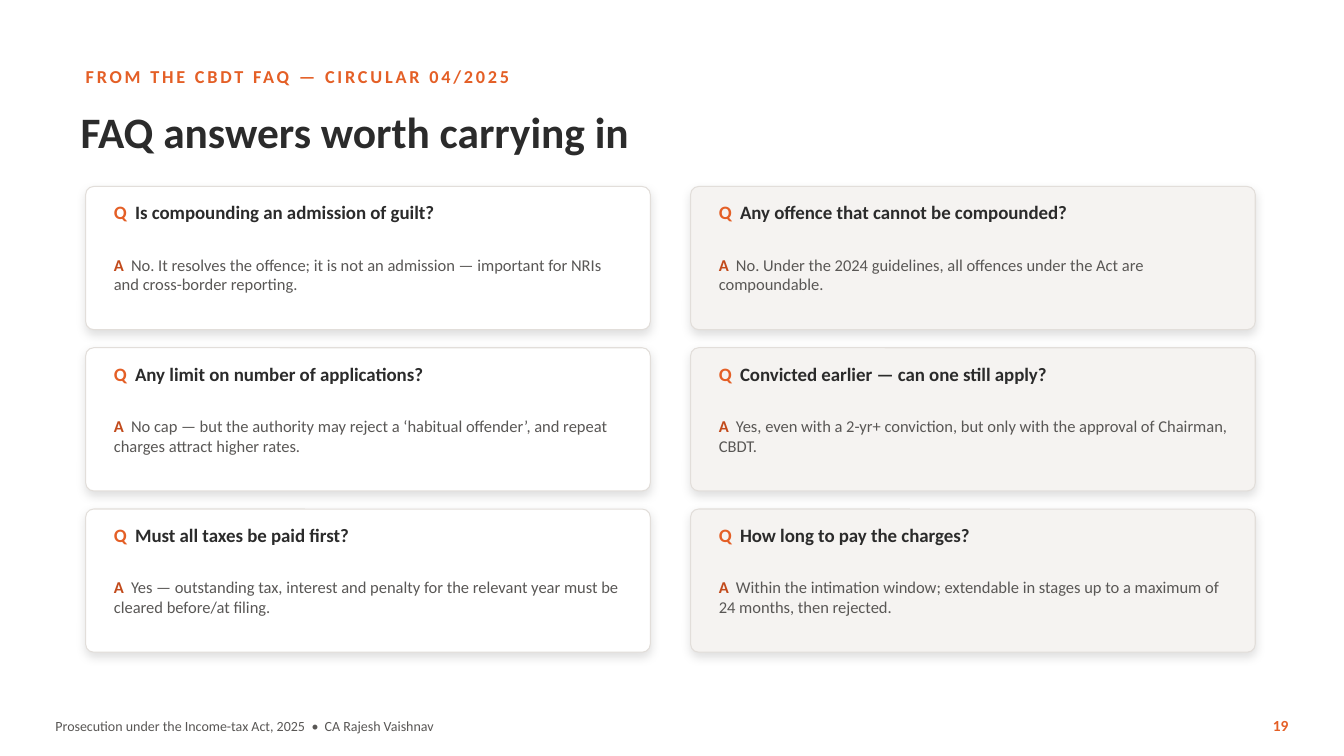
from lxml import etree
from pptx import Presentation
from pptx.dml.color import RGBColor
from pptx.enum.shapes import MSO_SHAPE
from pptx.enum.text import MSO_ANCHOR, PP_ALIGN
from pptx.oxml.ns import qn
from pptx.util import Inches, Pt

ROUNDED = MSO_SHAPE.ROUNDED_RECTANGLE
TOP, MIDDLE = MSO_ANCHOR.TOP, MSO_ANCHOR.MIDDLE
LEFT, RIGHT = PP_ALIGN.LEFT, PP_ALIGN.RIGHT

COLORS = {
    "orange": "E45F26",
    "rust": "C24A1B",
    "ink": "2B2B2B",
    "gray": "595755",
    "white": "FFFFFF",
    "sand": "F5F3F1",
    "border": "E2DEDA",
    "shadow": "000000",
}

FAQS = [
    ("Is compounding an admission of guilt?",
     "No. It resolves the offence; it is not an admission — important for NRIs and cross-border reporting."),
    ("Any offence that cannot be compounded?",
     "No. Under the 2024 guidelines, all offences under the Act are compoundable."),
    ("Any limit on number of applications?",
     "No cap — but the authority may reject a ‘habitual offender’, and repeat charges attract higher rates."),
    ("Convicted earlier — can one still apply?",
     "Yes, even with a 2-yr+ conviction, but only with the approval of Chairman, CBDT."),
    ("Must all taxes be paid first?",
     "Yes — outstanding tax, interest and penalty for the relevant year must be cleared before/at filing."),
    ("How long to pay the charges?",
     "Within the intimation window; extendable in stages up to a maximum of 24 months, then rejected."),
]


def add_run(paragraph, text, *, font, size, color, bold=False, spacing=None):
    run = paragraph.add_run()
    run.text = text
    run.font.name = font
    run.font.size = Pt(size)
    run.font.bold = bold
    run.font.color.rgb = RGBColor.from_string(COLORS[color])
    if spacing is not None:
        run.font._element.set("spc", str(spacing * 100))


class SlideBuilder:
    font = "Calibri"
    columns, rows = 133.3, 75
    card_columns, card_rows = 56, 14.2
    column_step, row_step = 60, 16

    def __init__(self, presentation):
        presentation.slide_width = self.grid(self.columns)
        presentation.slide_height = self.grid(self.rows)
        self.slide = presentation.slides.add_slide(presentation.slide_layouts[6])

    def grid(self, units):
        return Inches(units / 10)

    def place(self, *units):
        return [self.grid(unit) for unit in units]

    def text(self, position, runs, anchor=MIDDLE, align=LEFT, line_spacing=None, tabs=()):
        box = self.slide.shapes.add_textbox(*self.place(*position))
        frame = box.text_frame
        frame.word_wrap = True
        frame.vertical_anchor = anchor
        frame.margin_left = frame.margin_top = 0
        frame.margin_right = frame.margin_bottom = 0
        paragraph = frame.paragraphs[0]
        if tabs:
            properties = paragraph._p.get_or_add_pPr()
            tab_list = etree.SubElement(properties, qn("a:tabLst"))
            for tab in tabs:
                etree.SubElement(tab_list, qn("a:tab"), pos=str(self.grid(tab)), algn="l")
        paragraph.alignment = align
        if line_spacing:
            paragraph.line_spacing = Pt(line_spacing)
        for text, style in runs:
            add_run(paragraph, text, font=self.font, **style)

    def panel(self, position, fill):
        shape = self.slide.shapes.add_shape(ROUNDED, *self.place(*position))
        shape.adjustments[0] = 0.056
        shape.fill.solid()
        shape.fill.fore_color.rgb = RGBColor.from_string(COLORS[fill])
        shape.line.color.rgb = RGBColor.from_string(COLORS["border"])
        shape.line.width = Pt(0.75)
        shape.shadow.inherit = False
        effects = shape._element.spPr.find(qn("a:effectLst"))
        shadow = etree.SubElement(
            effects, qn("a:outerShdw"), blurRad=str(Pt(7)), dist=str(Pt(3)),
            dir="5400000", algn="bl", rotWithShape="0")
        color = etree.SubElement(shadow, qn("a:srgbClr"), val=COLORS["shadow"])
        etree.SubElement(color, qn("a:alpha"), val="13000")

    def card(self, index, question, answer):
        row, column = divmod(index, 2)
        left = 8.5 + column * self.column_step
        top = 18.5 + row * self.row_step
        self.panel((left, top, self.card_columns, self.card_rows), ("white", "sand")[column])
        self.text((left + 2.8, top + 1.6, 50.5, 5), [
            ("Q\t", dict(size=13.5, color="orange", bold=True)),
            (question, dict(size=13.5, color="ink", bold=True)),
        ], anchor=TOP, line_spacing=15, tabs=[2.1])
        self.text((left + 2.8, top + 6.8, 51, 6.8), [
            ("A\t", dict(size=11.8, color="rust", bold=True)),
            (answer, dict(size=11.8, color="gray")),
        ], anchor=TOP, line_spacing=14, tabs=[1.7])


def main():
    presentation = Presentation()
    builder = SlideBuilder(presentation)
    builder.text((8.5, 6, 110, 3.2), [
        ("FROM THE CBDT FAQ — CIRCULAR 04/2025",
         dict(size=13, color="orange", bold=True, spacing=2))])
    builder.text((8, 9.5, 120, 7), [
        ("FAQ answers worth carrying in", dict(size=31, color="ink", bold=True))])
    for index, (question, answer) in enumerate(FAQS):
        builder.card(index, question, answer)
    builder.text((5.5, 70.5, 90, 3), [
        ("Prosecution under the Income-tax Act, 2025\t•\tCA Rajesh Vaishnav",
         dict(size=10, color="gray"))], tabs=[25.4, 26.7])
    builder.text((123.3, 70.5, 4.5, 3), [
        ("19", dict(size=11, color="orange", bold=True))], align=RIGHT)
    presentation.save("out.pptx")


if __name__ == "__main__":
    main()
